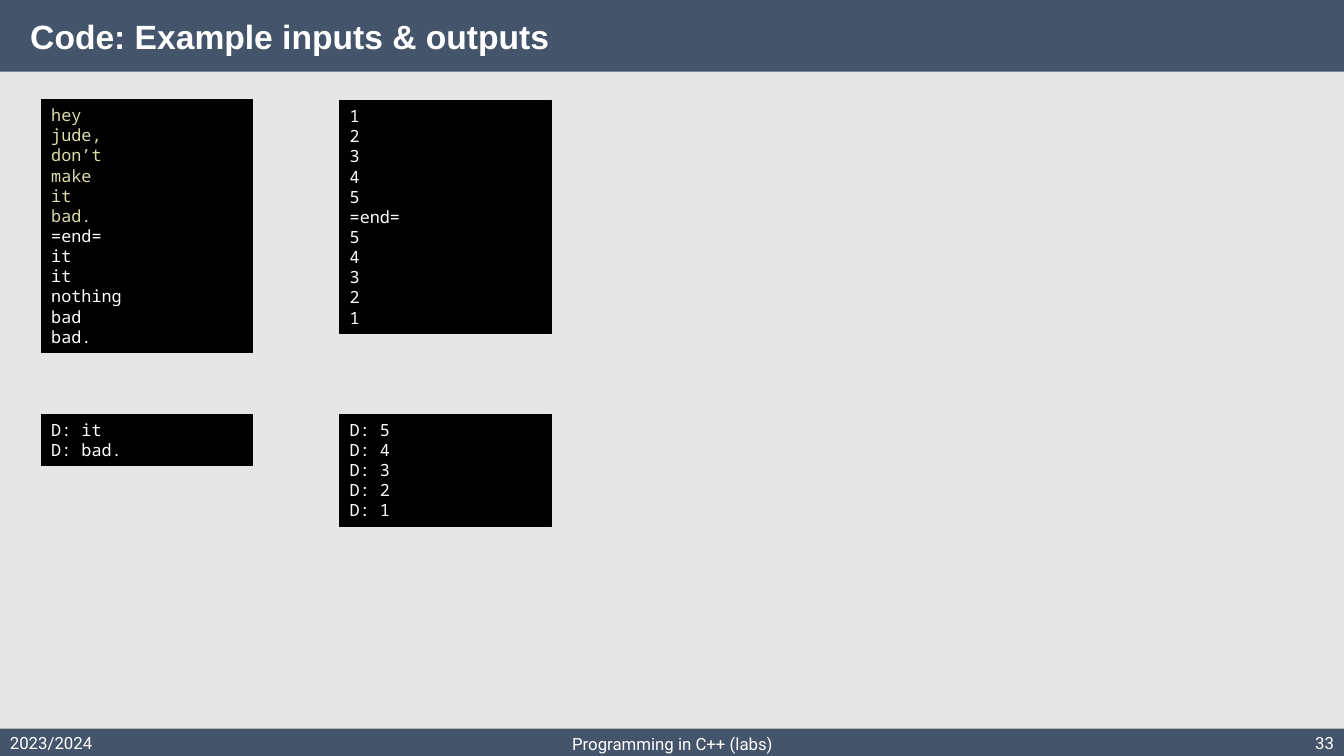
import pptx
import pptx.util
import pptx.dml.color
import pptx.enum.shapes
import pptx.enum.text

ALIGN = pptx.enum.text.PP_ALIGN
ANCHOR = pptx.enum.text.MSO_ANCHOR
FIT = pptx.enum.text.MSO_AUTO_SIZE
RECTANGLE = pptx.enum.shapes.MSO_SHAPE.RECTANGLE

TITLE = "Code: Example inputs & outputs"
FOOTERS = [
    ("2023/2024", 0, 7.22, 3, ALIGN.LEFT),
    ("Programming in C++ (labs)", 4.42, 7.23, 4.5, ALIGN.CENTER),
    ("33", 10.33, 7.22, 3, ALIGN.RIGHT),
]
CONSOLES = [
    {"column": 0, "top": 0.99, "typed": "hey jude, don’t make it bad.",
     "printed": ["=end=", "it", "it", "nothing", "bad", "bad."]},
    {"column": 0, "top": 4.11, "typed": "", "printed": ["D: it", "D: bad."]},
    {"column": 1, "top": 1, "typed": "",
     "printed": ["1", "2", "3", "4", "5", "=end=", "5", "4", "3", "2", "1"]},
    {"column": 1, "top": 4.11, "typed": "",
     "printed": ["D: 5", "D: 4", "D: 3", "D: 2", "D: 1"]},
]

THEME = {
    "background": "E7E6E6", "bar": "44546A", "console": "000000",
    "text": "FFFFFF", "typed": "DCDCAA",
    "title_font": "Arial", "footer_font": "Roboto", "code_font": "Noto Sans Mono",
    "title_size": 24, "small_size": 12, "line_width": 0.75,
}
WIDTH, HEIGHT = 13.33, 7.5
TITLE_HEIGHT, FOOTER_HEIGHT = 0.71, 0.27
GRID_LEFT, COLUMN_PITCH, CONSOLE_WIDTH = 0.41, 2.96, 2.1
LINE_HEIGHT, CONSOLE_PADDING = 0.2, 0.11


def inches(*lengths):
    return [pptx.util.Inches(length) for length in lengths]


def color(name):
    return pptx.dml.color.RGBColor.from_string(THEME[name])


def apply(target, values):
    for name, value in values.items():
        setattr(target, name, value)


def paint(fill, name):
    fill.solid()
    fill.fore_color.rgb = color(name)


def write(paragraph, text, font, size="small_size", ink="text", bold=False, align=ALIGN.LEFT):
    paragraph.alignment = align
    run = paragraph.add_run()
    run.text = text
    apply(run.font, {"name": THEME[font], "size": pptx.util.Pt(THEME[size]), "bold": bold})
    run.font.color.rgb = color(ink)


def add_rectangle(slide, box, fill):
    shape = slide.shapes.add_shape(RECTANGLE, *inches(*box))
    shape.shadow.inherit = False
    paint(shape.fill, fill)
    shape.line.fill.background()
    return shape


def add_title(slide):
    title = slide.shapes.title
    left, top, width, height = inches(0, 0, WIDTH, TITLE_HEIGHT)
    apply(title, {"left": left, "top": top, "width": width, "height": height})
    paint(title.fill, "bar")
    margins = inches(0.3, 0.2, 0.1, 0.05)
    names = ["margin_left", "margin_top", "margin_right", "margin_bottom"]
    frame = title.text_frame
    apply(frame, dict(zip(names, margins)))
    apply(frame, {"vertical_anchor": ANCHOR.TOP, "auto_size": FIT.NONE, "word_wrap": True})
    paragraph = frame.paragraphs[0]
    paragraph.line_spacing = 0.9
    write(paragraph, TITLE, "title_font", "title_size", bold=True)


def add_footer(slide, text, left, top, width, align):
    box = slide.shapes.add_textbox(*inches(left, top, width, FOOTER_HEIGHT))
    box.text_frame.word_wrap = True
    write(box.text_frame.paragraphs[0], text, "footer_font", align=align)


def add_console(slide, console):
    lines = [(word, "typed") for word in console["typed"].split()]
    lines += [(line, "text") for line in console["printed"]]
    left = GRID_LEFT + console["column"] * COLUMN_PITCH
    height = len(lines) * LINE_HEIGHT + CONSOLE_PADDING
    shape = add_rectangle(slide, (left, console["top"], CONSOLE_WIDTH, height), "console")
    paint(shape.line.fill, "console")
    shape.line.width = pptx.util.Pt(THEME["line_width"])
    frame = shape.text_frame
    apply(frame, {"vertical_anchor": ANCHOR.TOP, "word_wrap": True,
                  "auto_size": FIT.SHAPE_TO_FIT_TEXT})
    for index, (line, ink) in enumerate(lines):
        paragraph = frame.add_paragraph() if index else frame.paragraphs[0]
        write(paragraph, line, "code_font", ink=ink)


def main():
    presentation = pptx.Presentation()
    width, height = inches(WIDTH, HEIGHT)
    apply(presentation, {"slide_width": width, "slide_height": height})
    slide = presentation.slides.add_slide(presentation.slide_layouts.get_by_name("Title Only"))
    paint(slide.background.fill, "background")
    add_rectangle(slide, (0, HEIGHT - FOOTER_HEIGHT, WIDTH, FOOTER_HEIGHT), "bar")
    add_title(slide)
    for footer in FOOTERS:
        add_footer(slide, *footer)
    for console in CONSOLES:
        add_console(slide, console)
    presentation.save("out.pptx")


if __name__ == "__main__":
    main()
